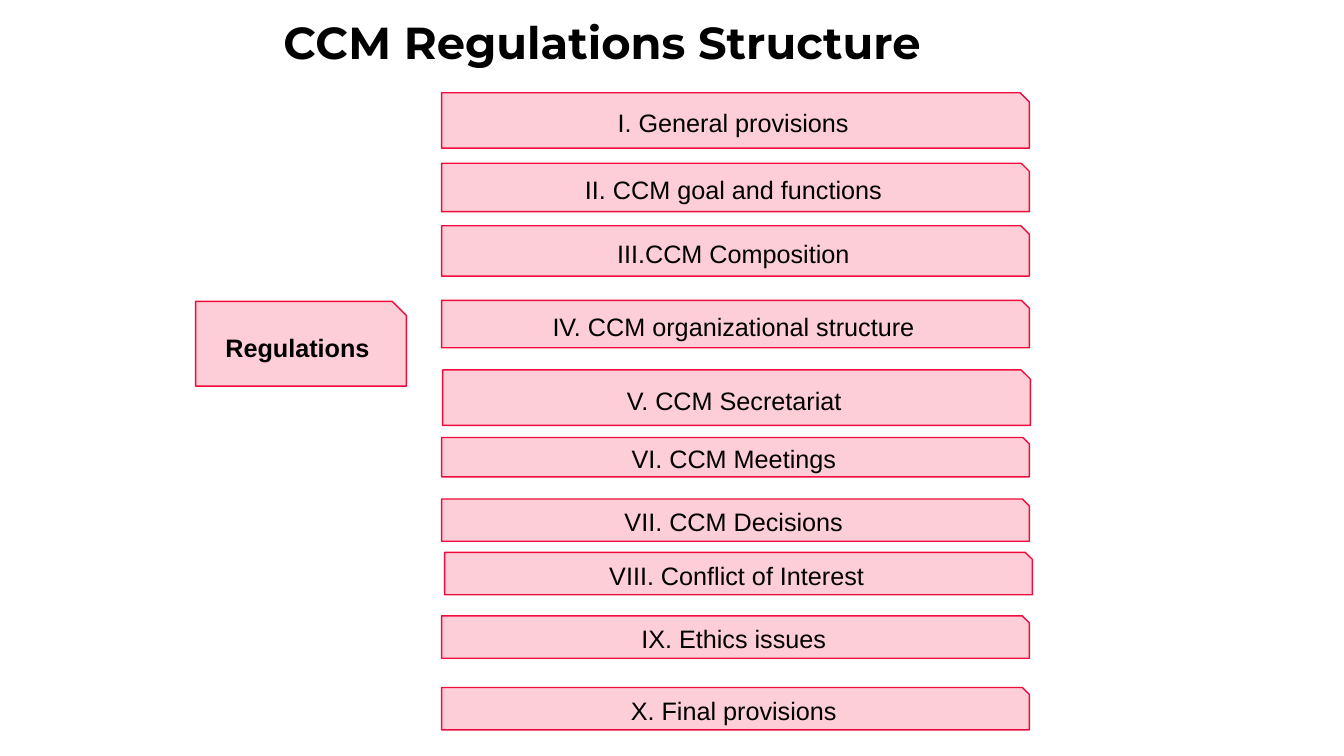
"""Build the CCM Regulations Structure slide."""
from dataclasses import dataclass

from pptx import Presentation
from pptx import util as u
from pptx.dml.color import RGBColor
from pptx.enum import shapes, text

PX = 9144
COLORS = {"text": "000000", "fill": "FDCDD8", "line": "EE0C3D"}
CHAPTER_LEFT, CHAPTER_WIDTH = 438, 583


@dataclass
class Card:
    label: str
    top: int
    height: int
    left: int = CHAPTER_LEFT
    width: int = CHAPTER_WIDTH
    bold: bool = False


CARDS = [
    Card("I. General provisions", 92, 55),
    Card("II. CCM goal and functions", 162, 48),
    Card("III.CCM Composition", 224, 50),
    Card("IV. CCM organizational structure", 298, 47),
    Card("V. CCM Secretariat", 367, 55, left=439),
    Card("Regulations", 299, 84, left=194, width=209, bold=True),
    Card("VI. CCM Meetings", 434, 39),
    Card("VII. CCM Decisions", 495, 42),
    Card("VIII. Conflict of Interest", 548, 42, left=441),
    Card("IX. Ethics issues", 611, 42),
    Card("X. Final provisions", 682, 42),
]


def px(n: int) -> u.Emu:
    return u.Emu(n * PX)


def color(name: str) -> RGBColor:
    return RGBColor.from_string(COLORS[name])


def style_text(p, font: str, size: int, bold: bool, align) -> None:
    p.alignment = align
    for r in p.runs:
        r.font.name = font
        r.font.size = u.Pt(size)
        r.font.bold = bold
        r.font.color.rgb = color("text")


def add_title(s, label: str) -> None:
    sp = s.shapes.title
    sp.left, sp.top, sp.width, sp.height = map(px, (281, 21, 853, 54))
    tf = sp.text_frame
    tf.text = label
    tf.word_wrap = True
    tf.auto_size = text.MSO_AUTO_SIZE.NONE
    tf.vertical_anchor = text.MSO_ANCHOR.TOP
    tf.margin_left = tf.margin_top = tf.margin_right = tf.margin_bottom = 0
    p = tf.paragraphs[0]
    p.line_spacing = 0.9
    p.space_before = u.Pt(0)
    style_text(p, "Montserrat", 32, True, text.PP_ALIGN.LEFT)


def add_card(s, card: Card) -> None:
    sp = s.shapes.add_shape(
        shapes.MSO_SHAPE.SNIP_1_RECTANGLE,
        px(card.left), px(card.top), px(card.width), px(card.height),
    )
    sp.shadow.inherit = False
    sp.fill.solid()
    sp.fill.fore_color.rgb = color("fill")
    sp.line.color.rgb = color("line")
    sp.line.width = u.Pt(1)
    tf = sp.text_frame
    tf.text = card.label
    tf.word_wrap = True
    tf.vertical_anchor = text.MSO_ANCHOR.MIDDLE
    style_text(tf.paragraphs[0], "Arial", 18, card.bold, text.PP_ALIGN.CENTER)


def main() -> None:
    prs = Presentation()
    prs.slide_width, prs.slide_height = px(1333), px(750)
    s = prs.slides.add_slide(prs.slide_layouts[5])
    add_title(s, "CCM Regulations Structure")
    for card in CARDS:
        add_card(s, card)
    prs.save("out.pptx")


if __name__ == "__main__":
    main()
